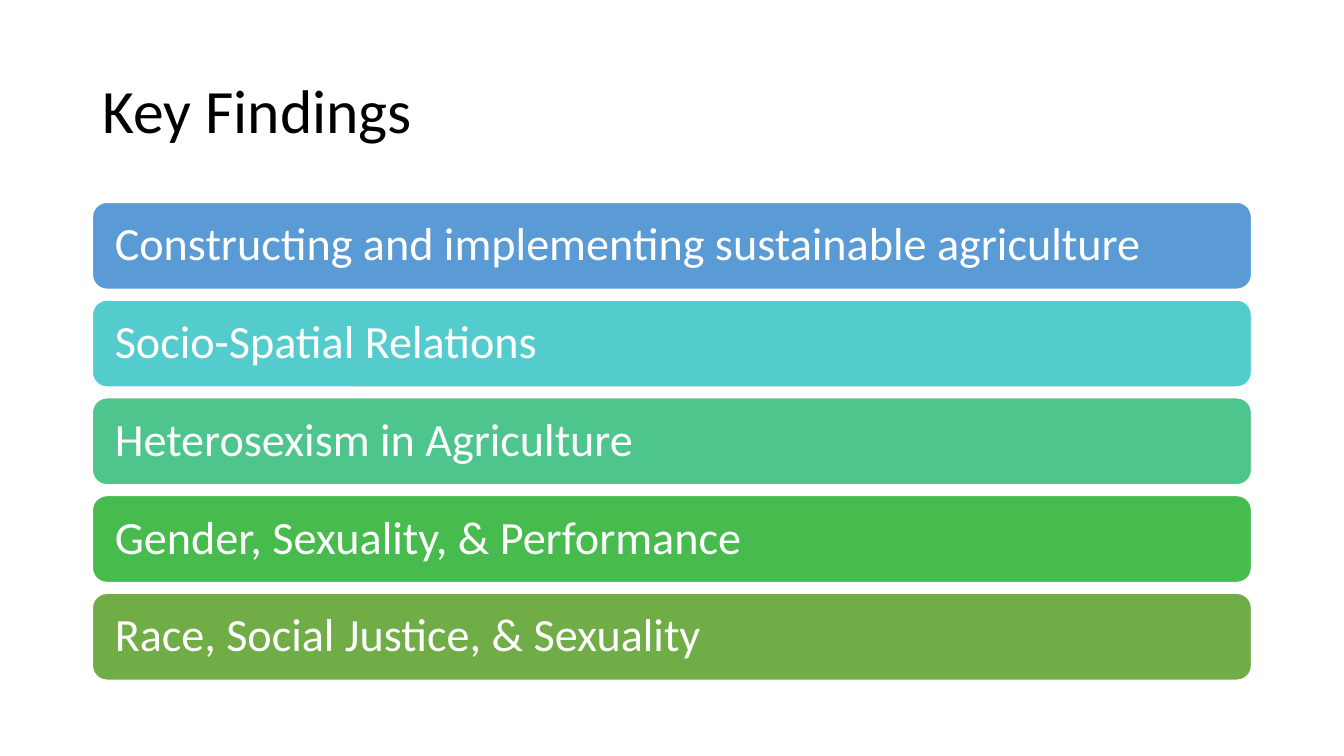
from dataclasses import dataclass

from pptx import Presentation
from pptx import util as u
from pptx.dml.color import RGBColor
from pptx.enum import shapes, text


@dataclass(frozen=True)
class Theme:
    font: str = "Calibri"
    title_size: float = 44
    bar_size: float = 33
    ink: str = "000000"
    paper: str = "FFFFFF"
    line_spacing: float = 0.9


# Wording and fill of each finding, top to bottom
FINDINGS = [
    ("Constructing and implementing sustainable agriculture", "5B9BD5"),
    ("Socio-Spatial Relations", "54CCCD"),
    ("Heterosexism in Agriculture", "4DC58D"),
    ("Gender, Sexuality, & Performance", "48BB4F"),
    ("Race, Social Justice, & Sexuality", "70AD47"),
]

# Layout in points
LEFT, WIDTH = 66, 828
TITLE_TOP, TITLE_HEIGHT, TITLE_INSET = 28.75, 104.4, 7.2
BAR_TOP, BAR_HEIGHT, BAR_PITCH, BAR_INSET = 144.5, 62.1, 69.82, 13


def apply(target, values):
    for name, value in values.items():
        setattr(target, name, value)


class SlideBuilder:
    def __init__(self, page, theme):
        self.page = page
        self.theme = theme

    def set_text(self, box, wording, size, color, inset):
        frame = box.text_frame
        apply(frame, {
            "word_wrap": True,
            "auto_size": text.MSO_AUTO_SIZE.NONE,
            "vertical_anchor": text.MSO_ANCHOR.MIDDLE,
            "margin_left": u.Pt(inset),
            "margin_right": u.Pt(inset),
        })
        para = frame.paragraphs[0]
        apply(para, {"alignment": text.PP_ALIGN.LEFT,
                     "line_spacing": self.theme.line_spacing})
        span = para.add_run()
        span.text = wording
        apply(span.font, {"name": self.theme.font, "size": u.Pt(size)})
        span.font.color.rgb = RGBColor.from_string(color)

    def title(self, wording):
        box = self.page.shapes.title
        apply(box, {"left": u.Pt(LEFT), "top": u.Pt(TITLE_TOP),
                    "width": u.Pt(WIDTH), "height": u.Pt(TITLE_HEIGHT)})
        self.set_text(box, wording, self.theme.title_size, self.theme.ink, TITLE_INSET)

    def bar(self, wording, fill, top):
        box = self.page.shapes.add_shape(
            shapes.MSO_SHAPE.ROUNDED_RECTANGLE,
            u.Pt(LEFT), u.Pt(top), u.Pt(WIDTH), u.Pt(BAR_HEIGHT))
        box.shadow.inherit = False
        box.fill.solid()
        box.fill.fore_color.rgb = RGBColor.from_string(fill)
        box.line.color.rgb = RGBColor.from_string(self.theme.paper)
        box.line.width = u.Pt(1)
        self.set_text(box, wording, self.theme.bar_size, self.theme.paper, BAR_INSET)


def main():
    deck = Presentation()
    apply(deck, {"slide_width": u.Pt(960), "slide_height": u.Pt(540)})
    title_only = deck.slide_layouts[5]
    builder = SlideBuilder(deck.slides.add_slide(title_only), Theme())

    # Heading
    builder.title("Key Findings")

    # Stack of findings
    for row, (wording, fill) in enumerate(FINDINGS):
        builder.bar(wording, fill, BAR_TOP + row * BAR_PITCH)

    deck.save("out.pptx")


if __name__ == "__main__":
    main()
